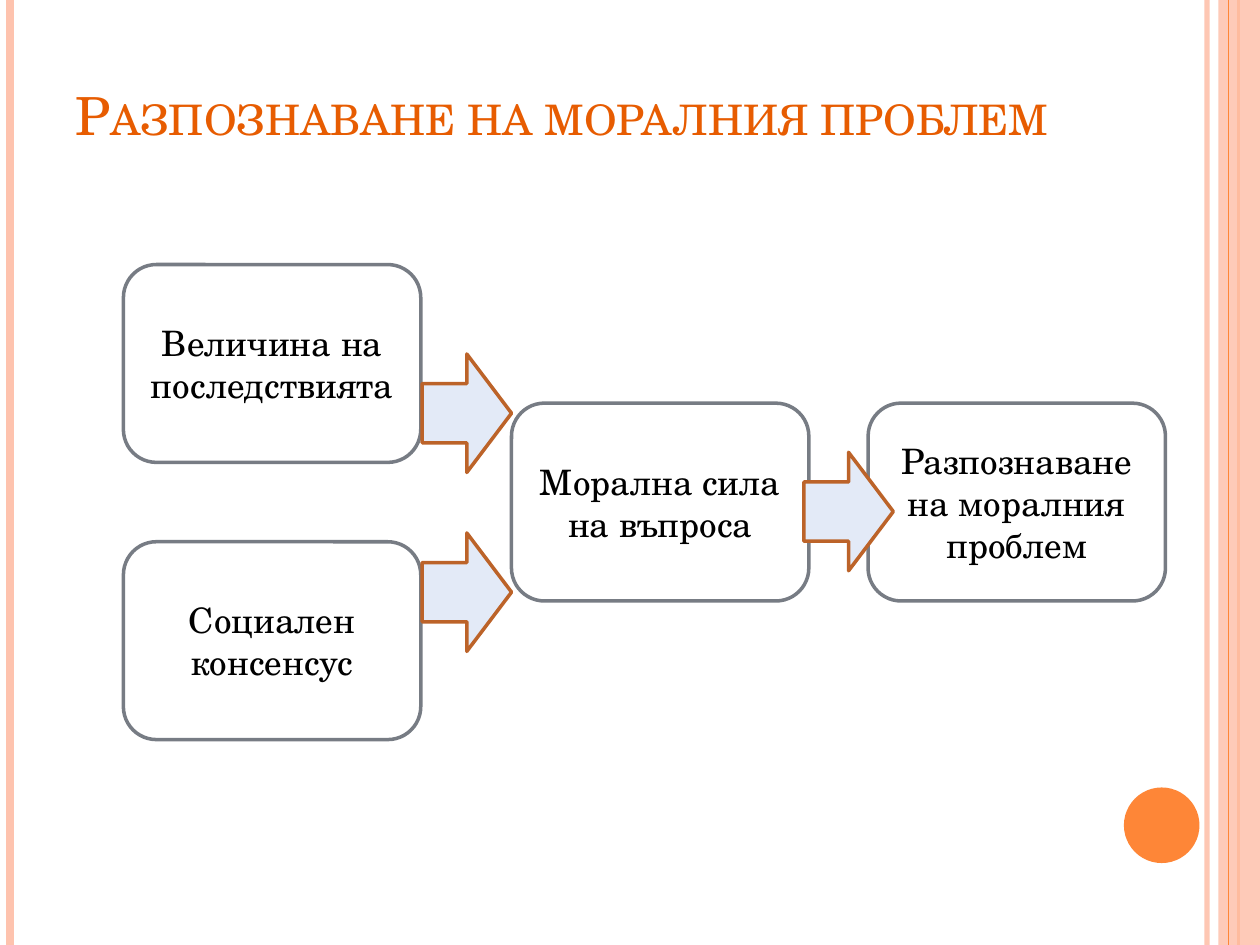
from lxml.etree import SubElement
from pptx import Presentation
from pptx.dml.color import RGBColor
from pptx.enum.shapes import MSO_CONNECTOR, MSO_SHAPE as Preset
from pptx.enum.text import MSO_ANCHOR, PP_ALIGN
from pptx.oxml.ns import qn
from pptx.util import Inches, Pt

PINK = RGBColor(0xFE, 0xC3, 0xAE)
ORANGE = RGBColor(0xFE, 0x86, 0x37)
TITLE_ORANGE = RGBColor(0xE7, 0x5C, 0x01)
WHITE = RGBColor(0xFF, 0xFF, 0xFF)
BLACK = RGBColor(0, 0, 0)
GREY = RGBColor(0x77, 0x7C, 0x84)
PALE_BLUE = RGBColor(0xE3, 0xEA, 0xF7)
BROWN = RGBColor(0xBC, 0x63, 0x29)
FONT = "TeX Gyre Schola"

deck = Presentation()
deck.slide_width, deck.slide_height = Inches(10), Inches(7.5)
slide = deck.slides.add_slide(deck.slide_layouts[6])
shapes = slide.shapes

# Grid of 100 columns by 75 rows
COL = deck.slide_width / 100
ROW = deck.slide_height / 75


def add_outlined(preset, col, row, cols, rows, fill, line=None):
    """Add a flat preset shape placed on the grid, without a line if none is given."""
    shape = shapes.add_shape(preset, round(col * COL), round(row * ROW),
                             round(cols * COL), round(rows * ROW))
    shape.shadow.inherit = False
    shape.fill.solid()
    shape.fill.fore_color.rgb = fill
    if line is None:
        shape.line.fill.background()
    else:
        shape.line.color.rgb = line
        shape.line.width = Pt(2)
    return shape


def add_text(frame, words, size, color):
    frame.word_wrap = True
    run = frame.paragraphs[0].add_run()
    run.text = words
    run.font.name, run.font.size = FONT, Pt(size)
    run.font.color.rgb = color
    return run


def_alpha = qn("a:alpha")

# Side stripes: column, colour, width, opacity; the band lies below the last one
for col, color, width, opacity in [(95.8, PINK, 3, 93), (0.8, PINK, 4.5, 100),
                                   (98.3, ORANGE, 1.5, 100), (97.5, ORANGE, 0.75, 100)]:
    if col == 97.5:
        band = add_outlined(Preset.RECTANGLE, 96.7, 0, 3.3, 75, PINK)
        band_color = band.fill._xPr.find(qn("a:solidFill"))[0]
        SubElement(band_color, def_alpha, val="87000")
    stripe = shapes.add_connector(MSO_CONNECTOR.STRAIGHT, round(col * COL), 0,
                                  round(col * COL), deck.slide_height)
    stripe.line.color.rgb = color
    stripe.line.width = Pt(width)
    properties = stripe._element.spPr
    SubElement(properties, qn("a:effectLst"))
    if opacity < 100:
        stripe_color = properties.find(qn("a:ln")).find(qn("a:solidFill"))[0]
        SubElement(stripe_color, def_alpha, val=str(opacity * 1000))

add_outlined(Preset.OVAL, 89.2, 62.5, 6, 6, ORANGE)

title = shapes.add_textbox(round(5 * COL), round(6.1 * ROW),
                           round(81.7 * COL), round(12.5 * ROW))
heading = add_text(title.text_frame, "Разпознаване на моралния проблем", 30, TITLE_ORANGE)
heading._r.get_or_add_rPr().set("cap", "small")

# Model: two causes, the moral force of the issue, and its recognition
for col, row, words in [(68.9, 32, "Разпознаване на моралния проблем"),
                        (40.6, 32, "Морална сила на въпроса"),
                        (9.8, 43, "Социален консенсус"),
                        (9.8, 21, "Величина на последствията")]:
    box = add_outlined(Preset.ROUNDED_RECTANGLE, col, row, 23.6, 15.7, WHITE, GREY)
    box.text_frame.vertical_anchor = MSO_ANCHOR.MIDDLE
    add_text(box.text_frame, words, 20, BLACK)
    box.text_frame.paragraphs[0].alignment = PP_ALIGN.CENTER

for col, row in [(33.5, 28.1), (33.5, 42.3), (63.8, 35.9)]:
    add_outlined(Preset.RIGHT_ARROW, col, row, 7.1, 9.4, PALE_BLUE, BROWN)

deck.save("out.pptx")
